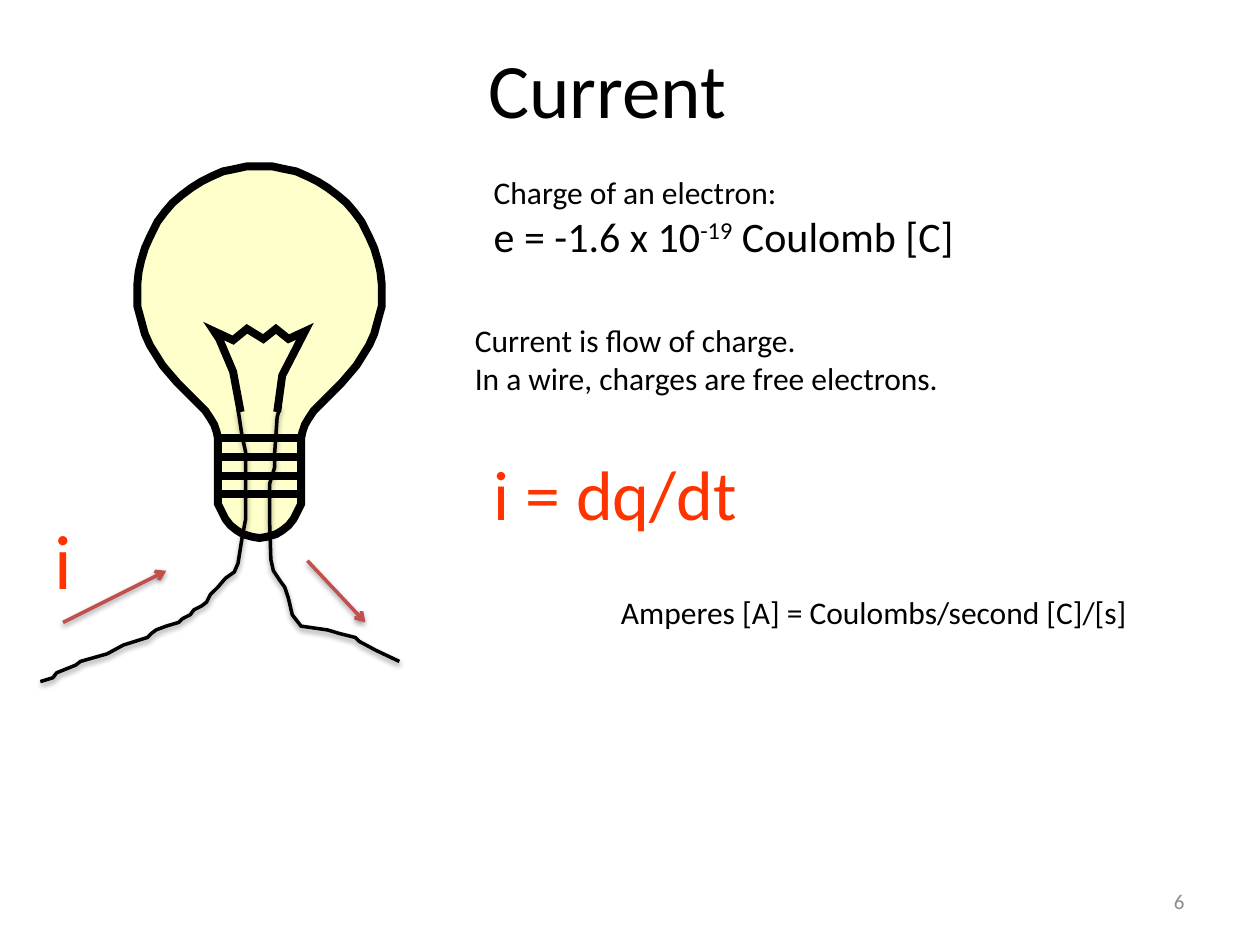
from dataclasses import dataclass

from lxml import etree
from pptx import Presentation
from pptx.dml.color import RGBColor
from pptx.enum.shapes import MSO_CONNECTOR
from pptx.enum.text import MSO_ANCHOR, PP_ALIGN
from pptx.oxml.ns import qn
from pptx.util import Pt

PX = 9144
STRAIGHT = MSO_CONNECTOR.STRAIGHT
TOP, MIDDLE = MSO_ANCHOR.TOP, MSO_ANCHOR.MIDDLE
LEFT, CENTER, RIGHT = PP_ALIGN.LEFT, PP_ALIGN.CENTER, PP_ALIGN.RIGHT


@dataclass(frozen=True)
class Theme:
    font: str = "Calibri"
    black: RGBColor = RGBColor(0, 0, 0)
    accent: RGBColor = RGBColor(0xFF, 0x33, 0x00)
    arrow: RGBColor = RGBColor(0xC0, 0x50, 0x4D)
    glass: RGBColor = RGBColor(0xFF, 0xFF, 0xCC)
    gray: RGBColor = RGBColor(0x8C, 0x8C, 0x8C)
    title: int = 44
    formula: int = 40
    value: int = 24
    body: int = 18
    number: int = 12
    bulb_line: float = 4.5
    wire_line: int = 2


THEME = Theme()

BULB_HALF = [
    (0, 295), (6, 294), (13, 292), (18, 289), (23, 285), (27, 280), (30, 274),
    (33, 268), (33, 216), (34, 211), (36, 205), (39, 200), (43, 194), (65, 172),
    (71, 165), (77, 158), (87, 142), (91, 133), (94, 122), (97, 111), (97, 94),
    (96, 84), (94, 75), (91, 65), (87, 56), (81, 44), (75, 36), (69, 29),
    (62, 23), (54, 17), (46, 12), (38, 8), (29, 4), (19, 2), (10, 0), (0, 0),
]
FILAMENT = [
    (83, 195), (77, 163), (66, 137), (62, 131), (77, 138), (88, 129),
    (101, 137), (111, 129), (121, 137), (134, 131), (116, 166), (112, 195),
]
SCREW = [
    (65, 216), (131, 216), (131, 231), (65, 231),
    (65, 246), (131, 246), (131, 260), (65, 260),
]
LEFT_WIRE = [
    (157, 0), (160, 20), (163, 34), (163, 53), (163, 87), (160, 103), (157, 122),
    (154, 129), (147, 134), (141, 141), (135, 147), (132, 153), (128, 156),
    (122, 159), (119, 163), (113, 166), (110, 169), (100, 172), (92, 175),
    (88, 178), (85, 181), (66, 187), (53, 194), (32, 200), (28, 203), (13, 209),
    (10, 213), (0, 216),
]
RIGHT_WIRE = [
    (7, 1), (9, 3), (7, 10), (5, 39), (5, 50), (1, 63), (1, 93), (2, 123),
    (4, 132), (10, 141), (13, 145), (16, 154), (19, 167), (26, 176), (47, 179),
    (57, 182), (69, 185), (72, 188), (85, 195), (104, 204),
]


def add_child(parent, tag, **attributes):
    child = etree.SubElement(parent, qn(tag))
    for name, value in attributes.items():
        child.set(name, value)
    return child


def style_line(shape, color, width):
    shape.line.color.rgb = color
    shape.line.width = Pt(width)
    return shape.element.spPr.find(qn("a:ln"))


def add_shadow(shape):
    effects = add_child(shape.element.spPr, "a:effectLst")
    shadow = add_child(effects, "a:outerShdw", blurRad="40000", dist="20000",
                       dir="5400000", rotWithShape="0")
    color = add_child(shadow, "a:srgbClr", val="000000")
    add_child(color, "a:alpha", val="38000")


def add_outline(slide, left, top, contours, close=False):
    first, *others = contours
    builder = slide.shapes.build_freeform(*first[0], scale=PX)
    builder.add_line_segments(first[1:], close=close)
    for contour in others:
        builder.move_to(*contour[0])
        builder.add_line_segments(contour[1:], close=close)
    shape = builder.convert_to_shape(left * PX, top * PX)
    shape.fill.background()
    return shape


def add_bulb(slide, left, top, center):
    right_half = [(center + x, y) for x, y in BULB_HALF]
    left_half = [(center - x, y) for x, y in reversed(BULB_HALF[1:-1])]
    glass = add_outline(slide, left, top, [right_half + left_half], close=True)
    glass.fill.solid()
    glass.fill.fore_color.rgb = THEME.glass
    details = add_outline(slide, left, top, [FILAMENT, SCREW])
    for shape in (glass, details):
        line = style_line(shape, THEME.black, THEME.bulb_line)
        add_child(line, "a:miter", lim="800000")
        shape.shadow.inherit = False


def add_wire(slide, left, top, points):
    wire = add_outline(slide, left, top, [points])
    style_line(wire, THEME.black, THEME.wire_line)
    add_shadow(wire)


def add_arrow(slide, left, top, width, height):
    ends = (left, top, left + width, top + height)
    arrow = slide.shapes.add_connector(STRAIGHT, *(end * PX for end in ends))
    line = style_line(arrow, THEME.arrow, THEME.wire_line)
    add_child(line, "a:tailEnd", type="arrow")
    add_shadow(arrow)


def add_text(slide, box, lines, color=THEME.black, align=LEFT, anchor=TOP, wrap=True):
    shape = slide.shapes.add_textbox(*(length * PX for length in box))
    frame = shape.text_frame
    frame.word_wrap = wrap
    frame.vertical_anchor = anchor
    for index, (size, *parts) in enumerate(lines):
        paragraph = frame.add_paragraph() if index else frame.paragraphs[0]
        paragraph.alignment = align
        paragraph.font.name = THEME.font
        paragraph.font.size = Pt(size)
        paragraph.font.color.rgb = color
        for position, text in enumerate(parts):
            run = paragraph.add_run()
            run.text = text
            if position % 2:
                run.font._element.set("baseline", "30000")


def add_circuit(slide, left, top):
    add_bulb(slide, left + 76, top, center=98)
    add_wire(slide, left, top + 193, LEFT_WIRE)
    add_wire(slide, left + 181, top + 189, RIGHT_WIRE)
    add_arrow(slide, left + 18, top + 362, 82, -41)
    add_text(slide, (left - 44, top + 261, 125, 101), [(THEME.title, "i")],
             THEME.accent, CENTER, MIDDLE)
    add_arrow(slide, left + 212, top + 313, 46, 49)


def add_explanation(slide, left, top):
    add_text(slide, (left, top + 118, 397, 71), [
        (THEME.body, "Current is flow of charge."),
        (THEME.body, "In a wire, charges are free electrons."),
    ])
    add_text(slide, (left + 15, top, 397, 81), [
        (THEME.body, "Charge of an electron:"),
        (THEME.value, "e = -1.6 x 10", "-19", " Coulomb [C]"),
    ])
    add_text(slide, (left + 15, top + 221, 215, 77),
             [(THEME.formula, "i = dq/dt")], THEME.accent, wrap=False)
    add_text(slide, (left + 116, top + 334, 432, 40),
             [(THEME.body, "Amperes [A] = Coulombs/second [C]/[s]")], wrap=False)


def main():
    presentation = Presentation()
    presentation.slide_width = 1000 * PX
    presentation.slide_height = 750 * PX
    slide = presentation.slides.add_slide(presentation.slide_layouts[6])
    add_text(slide, (32, 7, 900, 125), [(THEME.title, "Current")],
             align=CENTER, anchor=MIDDLE)
    add_circuit(slide, 32, 132)
    add_explanation(slide, 367, 132)
    add_text(slide, (717, 695, 233, 40), [(THEME.number, "6")],
             THEME.gray, RIGHT, MIDDLE)
    presentation.save("out.pptx")


if __name__ == "__main__":
    main()
